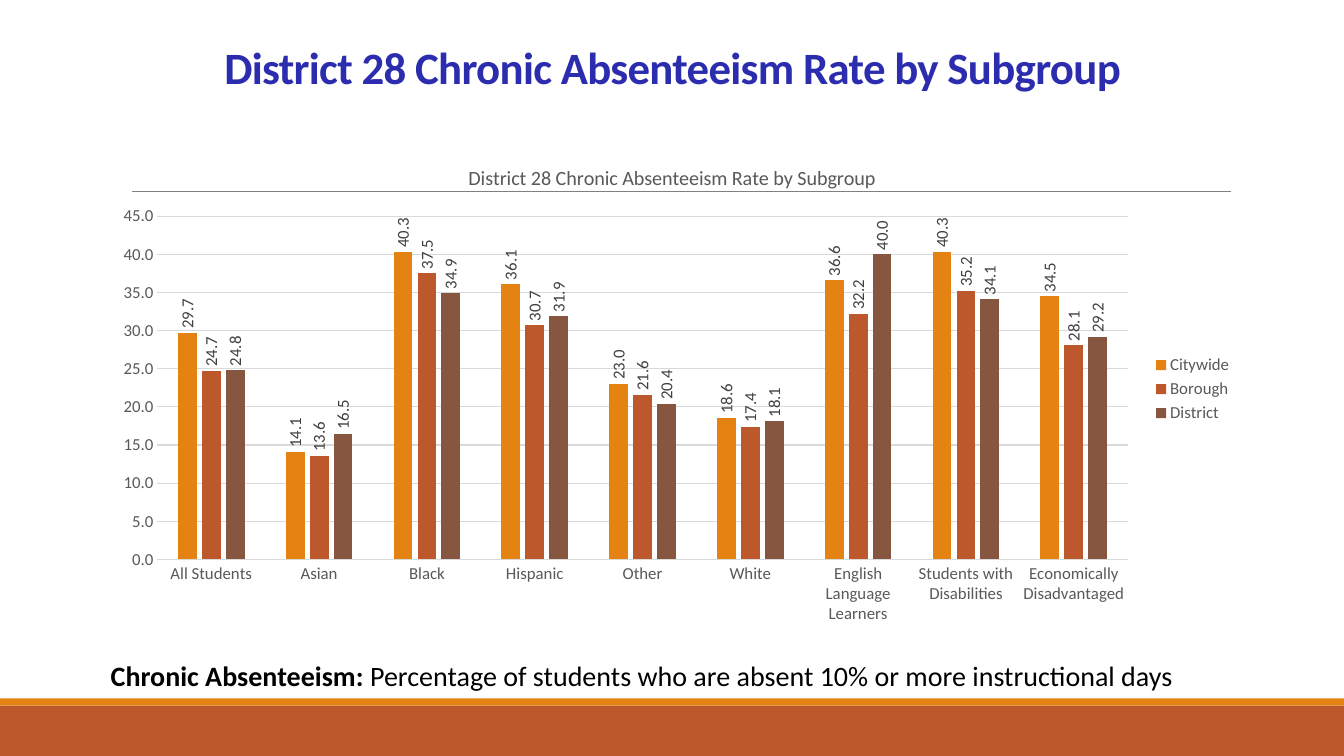
from lxml.etree import SubElement
from pptx import Presentation
from pptx.chart.data import CategoryChartData
from pptx.dml.color import RGBColor
from pptx.enum.chart import XL_CHART_TYPE, XL_LABEL_POSITION, XL_LEGEND_POSITION, XL_TICK_MARK
from pptx.enum.shapes import MSO_CONNECTOR, MSO_SHAPE
from pptx.enum.text import MSO_ANCHOR, MSO_AUTO_SIZE, PP_ALIGN
from pptx.oxml.ns import qn
from pptx.util import Inches, Pt

BLACK = RGBColor(0x00, 0x00, 0x00)
INDIGO = RGBColor(0x2C, 0x2C, 0xAE)
ORANGE = RGBColor(0xE4, 0x83, 0x12)
RUST = RGBColor(0xBD, 0x58, 0x2C)
BROWN = RGBColor(0x86, 0x56, 0x40)
RULE_GRAY = RGBColor(0x80, 0x80, 0x80)
GRID_GRAY = RGBColor(0xD9, 0xD9, 0xD9)
TEXT_GRAY = RGBColor(0x59, 0x59, 0x59)
LABEL_GRAY = RGBColor(0x40, 0x40, 0x40)

HEADING = "District 28 Chronic Absenteeism Rate by Subgroup"
SUBGROUPS = ["All Students", "Asian", "Black", "Hispanic", "Other", "White",
             "English Language Learners", "Students with Disabilities",
             "Economically Disadvantaged"]
RATES = [
    ("Citywide", ORANGE, [29.7, 14.1, 40.3, 36.1, 23.0, 18.6, 36.6, 40.3, 34.5]),
    ("Borough", RUST, [24.7, 13.6, 37.5, 30.7, 21.6, 17.4, 32.2, 35.2, 28.1]),
    ("District", BROWN, [24.8, 16.5, 34.9, 31.9, 20.4, 18.1, 40.0, 34.1, 29.2]),
]


def set_font(font, size, color, bold=False):
    font.name = "Calibri"
    font.size = Pt(size)
    font.bold = bold
    font.color.rgb = color


def add_band(page, top, height, color):
    band = page.shapes.add_shape(MSO_SHAPE.RECTANGLE, Inches(0), Inches(top),
                                 Inches(13.33), Inches(height))
    band.shadow.inherit = False
    band.fill.solid()
    band.fill.fore_color.rgb = color
    band.line.fill.background()


def add_rule(page):
    rule = page.shapes.add_connector(MSO_CONNECTOR.STRAIGHT, Inches(1.31), Inches(1.9),
                                     Inches(12.21), Inches(1.9))
    rule.line.color.rgb = RULE_GRAY
    rule.line.width = Pt(0.5)
    SubElement(rule._element.spPr, qn("a:effectLst"))


def fill_title(page):
    title = page.shapes.title
    title.left, title.top = Inches(1.77), Inches(0.43)
    title.width, title.height = Inches(9.8), Inches(0.78)
    frame = title.text_frame
    frame.auto_size = MSO_AUTO_SIZE.NONE
    frame.vertical_anchor = MSO_ANCHOR.TOP
    para = frame.paragraphs[0]
    para.alignment = PP_ALIGN.CENTER
    para.line_spacing = 0.85
    span = para.add_run()
    span.text = HEADING
    set_font(span.font, 32, INDIGO, bold=True)
    span.font._element.set("spc", "-50")


def add_definition(page):
    box = page.shapes.add_textbox(Inches(1), Inches(6.48), Inches(11.33), Inches(0.44))
    box.text_frame.word_wrap = True
    para = box.text_frame.paragraphs[0]
    for text, bold in [
        ("Chronic Absenteeism: ", True),
        ("Percentage of students who are absent 10% or more instructional days", False),
    ]:
        span = para.add_run()
        span.text = text
        set_font(span.font, 20, BLACK, bold)


def format_axes(chart):
    for axis in (chart.category_axis, chart.value_axis):
        axis.major_tick_mark = axis.minor_tick_mark = XL_TICK_MARK.NONE
        set_font(axis.tick_labels.font, 12, TEXT_GRAY)
    rates = chart.value_axis
    rates.minimum_scale, rates.maximum_scale, rates.major_unit = 0, 45, 5
    rates.tick_labels.number_format = "0.0"
    rates.tick_labels.number_format_is_linked = False
    rates.format.line.fill.background()
    for line in (chart.category_axis.format.line, rates.major_gridlines.format.line):
        line.color.rgb = GRID_GRAY
        line.width = Pt(0.75)


def format_series(series, color):
    series.format.fill.solid()
    series.format.fill.fore_color.rgb = color
    labels = series.data_labels
    labels.show_value = True
    labels.position = XL_LABEL_POSITION.OUTSIDE_END
    labels.number_format = "0.0"
    labels.number_format_is_linked = False
    set_font(labels.font, 12, LABEL_GRAY)
    body = labels._element.find(qn("c:txPr")).find(qn("a:bodyPr"))
    body.set("rot", "-5400000")
    body.set("vert", "horz")


def add_rate_chart(page):
    data = CategoryChartData(number_format="0.0")
    data.categories = SUBGROUPS
    for name, _, values in RATES:
        data.add_series(name, values)
    chart = page.shapes.add_chart(XL_CHART_TYPE.COLUMN_CLUSTERED, Inches(1), Inches(1.44),
                                  Inches(11.33), Inches(4.84), data).chart
    set_font(chart.font, 12, BLACK)
    chart.has_title = True
    title = chart.chart_title
    title.include_in_layout = False
    title.text_frame.text = HEADING
    set_font(title.text_frame.paragraphs[0].font, 14.4, TEXT_GRAY)
    chart.has_legend = True
    chart.legend.position = XL_LEGEND_POSITION.RIGHT
    chart.legend.include_in_layout = False
    set_font(chart.legend.font, 12, TEXT_GRAY)
    format_axes(chart)
    plot = chart.plots[0]
    plot.vary_by_categories = False
    plot.gap_width = 219
    plot.overlap = -27
    for series, (_, color, _) in zip(plot.series, RATES):
        format_series(series, color)


def main():
    deck = Presentation()
    deck.slide_width, deck.slide_height = Inches(13.33), Inches(7.5)
    page = deck.slides.add_slide(deck.slide_layouts[5])
    add_band(page, 7, 0.5, RUST)
    add_band(page, 6.93, 0.07, ORANGE)
    add_rule(page)
    fill_title(page)
    add_definition(page)
    add_rate_chart(page)
    deck.save("out.pptx")


if __name__ == "__main__":
    main()
